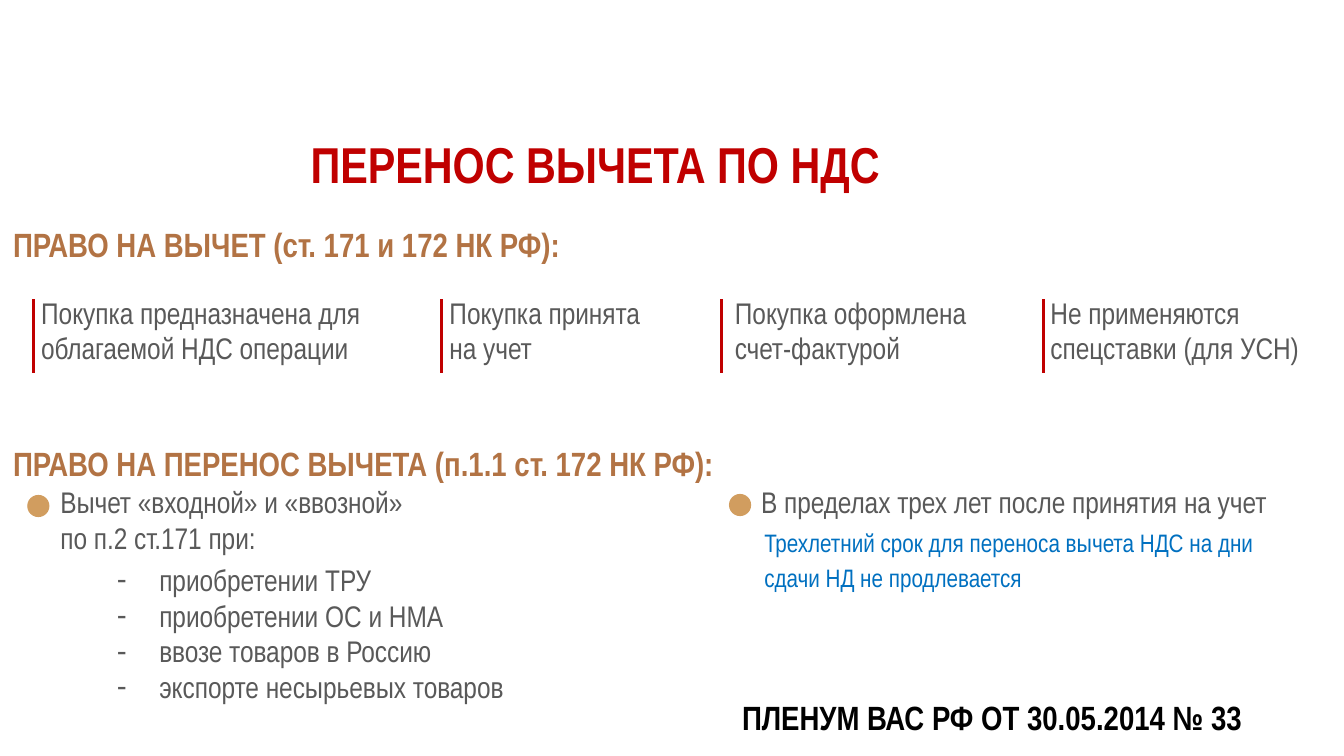
from lxml import etree
from pptx import Presentation
from pptx import util as u
from pptx.dml.color import RGBColor
from pptx.enum import shapes, text
from pptx.oxml import ns

# Content
TITLE = "ПЕРЕНОС ВЫЧЕТА ПО НДС"
RIGHT = "ПРАВО НА ВЫЧЕТ (ст. 171 и 172 НК РФ):"
MOVE = "ПРАВО НА ПЕРЕНОС ВЫЧЕТА (п.1.1 ст. 172 НК РФ):"
RULING = "ПЛЕНУМ ВАС РФ ОТ 30.05.2014 № 33"
NOTE = "Трехлетний срок для переноса вычета НДС на дни сдачи НД не продлевается"
TERMS = [  # bar x, text x, text width, wording
    (0.33, 0.31, 3.84, "Покупка предназначена для облагаемой НДС операции"),
    (4.38, 4.36, 2.37, "Покупка принята на учет"),
    (7.16, 7.19, 2.58, "Покупка оформлена счет-фактурой"),
    (10.35, 10.32, 2.87, "Не применяются спецставки (для УСН)"),
]
POINTS = [  # dot x, dot y, text x, text width, lines
    (0.27, 4.91, 0.5, 5.08, ["Вычет «входной» и «ввозной»", "по п.2 ст.171 при:"]),
    (7.23, 4.9, 7.45, 5.45, ["В пределах трех лет после принятия на учет"]),
]
CASES = ["приобретении ТРУ", "приобретении ОС и НМА",
         "ввозе товаров в Россию", "экспорте несырьевых товаров"]

# Theme
FACE, RED, GOLD = "Arial Narrow", "C00000", "D19D5F"
THEME = {
    "title": dict(size=36, color=RED, bold=True, line=0.9),
    "head": dict(size=24, color="B27344", bold=True, line=0.9),
    "wide": dict(size=24, color="B27344", bold=True, line=1.15),
    "ruling": dict(size=24, color="000000", bold=True, line=1.15),
    "text": dict(size=21.3, color="595959", bold=False, line=1),
    "note": dict(size=18, color="0070C0", bold=False, line=1.15),
}
WIDE, HIGH = 13.33, 7.5
ROW, BAR, LINE, DOT = 0.82, 0.73, 2.25, 0.22
PAD, SLIM, HANG = 0.13, (0.1, 0.05), 0.42

deck = Presentation()
deck.slide_width, deck.slide_height = u.Inches(WIDE), u.Inches(HIGH)
slide = deck.slides.add_slide(deck.slide_layouts[3])
title, head, cases = slide.placeholders


def tint(code):
    return RGBColor.from_string(code)


def place(shape, box):
    for name, size in zip(("left", "top", "width", "height"), box):
        setattr(shape, name, u.Inches(size))


def mark(para, dash):
    """Set the bullet and the hanging indent."""
    props = para._p.get_or_add_pPr()
    hang = u.Inches(HANG) if dash else 0
    props.set("marL", str(hang))
    props.set("indent", str(-hang))
    if dash:
        etree.SubElement(props, ns.qn("a:buChar")).set("char", "-")
    else:
        etree.SubElement(props, ns.qn("a:buNone"))


def write(shape, box, lines, style, pad=(PAD, PAD), dash=False,
          anchor=text.MSO_ANCHOR.TOP):
    place(shape, box)
    look, frame = THEME[style], shape.text_frame
    side, edge = map(u.Inches, pad)
    form = dict(word_wrap=True, auto_size=text.MSO_AUTO_SIZE.NONE,
                vertical_anchor=anchor, margin_left=side, margin_right=side,
                margin_top=edge, margin_bottom=edge)
    for name, value in form.items():
        setattr(frame, name, value)
    frame.text = "\n".join(lines)
    for para in frame.paragraphs:
        mark(para, dash)
        form = dict(alignment=text.PP_ALIGN.LEFT, line_spacing=look["line"],
                    space_before=u.Pt(0), space_after=u.Pt(0))
        for name, value in form.items():
            setattr(para, name, value)
        font = para.runs[0].font
        for name, value in dict(name=FACE, size=u.Pt(look["size"]),
                                bold=look["bold"]).items():
            setattr(font, name, value)
        font.color.rgb = tint(look["color"])


def label(*args, **more):
    write(slide.shapes.add_textbox(0, 0, 0, 0), *args, **more)


# Title and headings
write(title, (2.95, 1.29, 7.81, 0.74), [TITLE], "title",
      anchor=text.MSO_ANCHOR.MIDDLE)
write(head, (0, 2.14, 7.69, 0.54), [RIGHT], "head")
label((0, 4.2, 7.69, 0.54), [MOVE], "wide")

# Conditions with red bars
for bar, left, width, words in TERMS:
    label((left, 2.87, width, ROW), [words], "text", pad=SLIM)
    rule = slide.shapes.add_connector(
        shapes.MSO_CONNECTOR.STRAIGHT,
        *map(u.Inches, (bar, 2.97, bar, 2.97 + BAR)))
    rule.line.width = u.Pt(LINE)
    rule.line.color.rgb = tint(RED)
    etree.SubElement(rule._element.spPr, ns.qn("a:effectLst"))

# Points with gold dots
for x, y, left, width, lines in POINTS:
    label((left, 4.75, width, ROW), lines, "text", pad=SLIM)
    dot = slide.shapes.add_shape(shapes.MSO_SHAPE.OVAL, 0, 0, 0, 0)
    place(dot, (x, y, DOT, DOT))
    dot.shadow.inherit = False
    dot.fill.solid()
    dot.fill.fore_color.rgb = tint(GOLD)
    dot.line.fill.background()

# Cases, note and ruling
write(cases, (1.06, 5.52, 4.53, 1.54), CASES, "text", pad=SLIM, dash=True)
label((7.45, 5.06, 5.38, ROW), [NOTE], "note")
label((7.23, 6.72, 5.67, 0.57), [RULING], "ruling")

deck.save("out.pptx")
